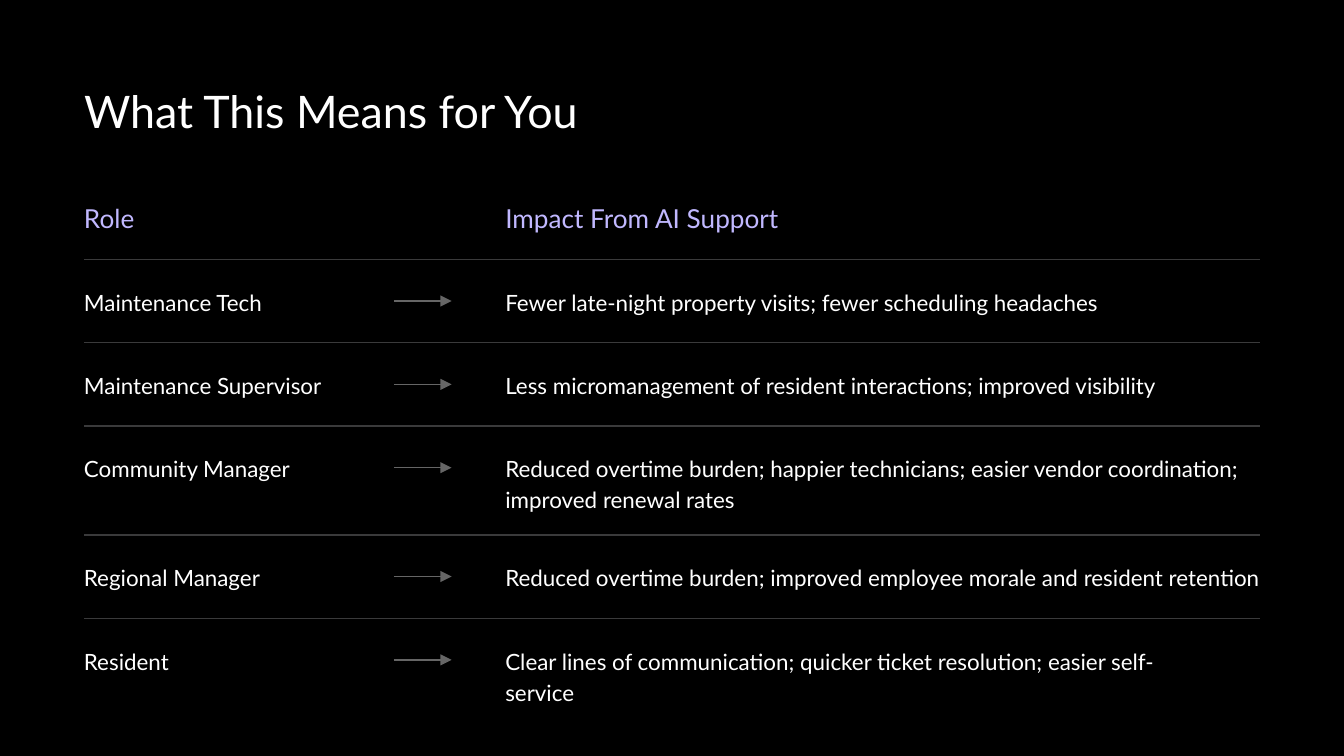
from dataclasses import dataclass

from lxml import etree
from pptx import Presentation
from pptx.dml.color import RGBColor
from pptx.enum.shapes import MSO_CONNECTOR
from pptx.enum.text import MSO_ANCHOR
from pptx.oxml.ns import qn
from pptx.util import Inches, Pt

STRAIGHT = MSO_CONNECTOR.STRAIGHT
TOP = MSO_ANCHOR.TOP


@dataclass(frozen=True)
class Theme:
    font: str = "Lato"
    background: str = "000000"
    text: str = "FFFFFF"
    heading: str = "C1B8FF"
    rule: str = "3A3A3B"
    arrow: str = "666666"
    title_size: int = 24
    heading_size: int = 14
    body_size: int = 12
    line_width: float = 0.75


THEME = Theme()

SLIDE_WIDTH = 10
SLIDE_HEIGHT = SLIDE_WIDTH * 9 / 16
LEFT = SLIDE_WIDTH / 16
RIGHT = SLIDE_WIDTH - LEFT
IMPACT_LEFT = 3.76
ROLE_WIDTH = 2.13
FULL_WIDTH, NARROW_WIDTH = 5.62, 5.22
ARROW_START, ARROW_END = 2.93, 3.36
HEADING_TOP = 1.47
FIRST_RULE = 1.93
TEXT_OFFSET, ARROW_OFFSET = 0.19, 0.31
SINGLE_ROW, DOUBLE_ROW = 0.62, 0.81

IMPACTS = [
    ("Maintenance Tech",
     "Fewer late-night property visits; fewer scheduling headaches",
     NARROW_WIDTH, SINGLE_ROW),
    ("Maintenance Supervisor",
     "Less micromanagement of resident interactions; improved visibility",
     FULL_WIDTH, SINGLE_ROW),
    ("Community Manager",
     "Reduced overtime burden; happier technicians; easier vendor coordination; "
     "improved renewal rates",
     FULL_WIDTH, DOUBLE_ROW),
    ("Regional Manager",
     "Reduced overtime burden; improved employee morale and resident retention",
     FULL_WIDTH, SINGLE_ROW),
    ("Resident",
     "Clear lines of communication; quicker ticket resolution; easier self-service",
     NARROW_WIDTH, DOUBLE_ROW),
]


def add_text(slide, text, *, left, top, width, height=0.2,
             size=THEME.body_size, color=THEME.text,
             line_spacing=1.15, space_after=12):
    box = slide.shapes.add_textbox(
        Inches(left), Inches(top), Inches(width), Inches(height))
    frame = box.text_frame
    frame.word_wrap = True
    frame.vertical_anchor = TOP
    frame.margin_left = frame.margin_right = 0
    frame.margin_top = frame.margin_bottom = 0
    paragraph = frame.paragraphs[0]
    paragraph.line_spacing = line_spacing
    paragraph.space_after = Pt(space_after)
    run = paragraph.add_run()
    run.text = text
    run.font.name = THEME.font
    run.font.size = Pt(size)
    run.font.color.rgb = RGBColor.from_string(color)


def add_line(slide, start, end, y, color, arrowhead=False):
    connector = slide.shapes.add_connector(
        STRAIGHT, Inches(start), Inches(y), Inches(end), Inches(y))
    connector.line.color.rgb = RGBColor.from_string(color)
    connector.line.width = Pt(THEME.line_width)
    properties = connector.line._get_or_add_ln()
    if arrowhead:
        etree.SubElement(properties, qn("a:tailEnd"), type="triangle")
    etree.SubElement(properties.getparent(), qn("a:effectLst"))


def add_headings(slide):
    for heading, left, width in (("Role", LEFT, 1.7),
                                 ("Impact From AI Support", IMPACT_LEFT, 2.93)):
        add_text(slide, heading, left=left, top=HEADING_TOP, width=width,
                 height=0.24, size=THEME.heading_size, color=THEME.heading)


def add_impact_row(slide, role, impact, impact_width, rule_y, impact_height):
    text_top = rule_y + TEXT_OFFSET
    add_line(slide, LEFT, RIGHT, rule_y, THEME.rule)
    add_text(slide, role, left=LEFT, top=text_top, width=ROLE_WIDTH)
    add_line(slide, ARROW_START, ARROW_END, rule_y + ARROW_OFFSET,
             THEME.arrow, arrowhead=True)
    add_text(slide, impact, left=IMPACT_LEFT, top=text_top,
             width=impact_width, height=impact_height)


def main():
    deck = Presentation()
    deck.slide_width, deck.slide_height = Inches(SLIDE_WIDTH), Inches(SLIDE_HEIGHT)
    slide = deck.slides.add_slide(deck.slide_layouts[6])
    slide.background.fill.solid()
    slide.background.fill.fore_color.rgb = RGBColor.from_string(THEME.background)

    add_text(slide, "What This Means for You", left=LEFT, top=0.62, width=4.25,
             height=0.4, size=THEME.title_size, line_spacing=1, space_after=0)
    add_headings(slide)
    rule_y = FIRST_RULE
    for role, impact, impact_width, row_height in IMPACTS:
        impact_height = 0.43 if row_height == DOUBLE_ROW else 0.2
        add_impact_row(slide, role, impact, impact_width, rule_y, impact_height)
        rule_y += row_height
    deck.save("out.pptx")


if __name__ == "__main__":
    main()
